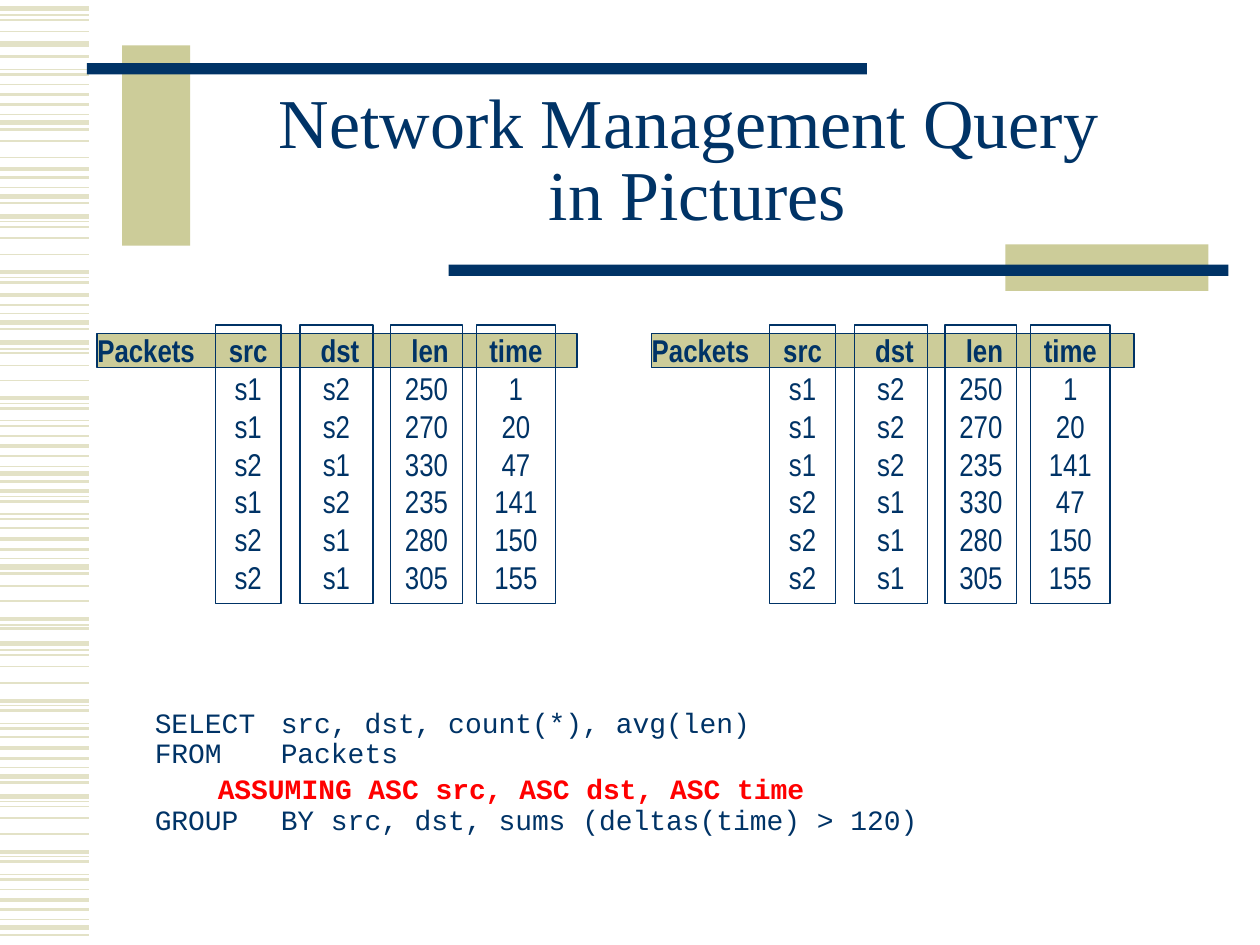
from pptx import Presentation
from pptx import util as u
from pptx.dml import color
from pptx.enum import shapes, text
from pptx.oxml import ns
from lxml import etree

Inches, Pt = u.Inches, u.Pt
COLORS = {"navy": "003366", "khaki": "CCCC99", "stripe": "E3E2C7", "red": "FF0000"}


def add_bar(left, top, width, height, fill=None, line=None):
    bar = slide.shapes.add_shape(shapes.MSO_SHAPE.RECTANGLE, Inches(left), Inches(top),
                                 Inches(width), Inches(height))
    bar.shadow.inherit = False
    if fill:
        bar.fill.solid()
        bar.fill.fore_color.rgb = color.RGBColor.from_string(COLORS[fill])
    else:
        bar.fill.background()
    if line:
        bar.line.color.rgb = color.RGBColor.from_string(COLORS[line])
        bar.line.width = Pt(0.75)
    else:
        bar.line.fill.background()
    return bar


def style_runs(paragraph, font, size, bold=False, ink="navy"):
    for run in paragraph.runs:
        run.font.name = font
        run.font.size = Pt(size)
        run.font.bold = bold
        run.font.color.rgb = color.RGBColor.from_string(COLORS[ink])


prs = Presentation()
prs.slide_width, prs.slide_height = Inches(10), Inches(7.5)
slide = prs.slides.add_slide(prs.slide_layouts[6])

# Striped left margin: line weight -> heights on the page
stripes = {
    3: [0.07, 0.35, 0.97, 1.56, 1.72, 2.56, 2.72, 3.76, 4.5, 5.11, 6.16, 6.32, 7.36],
    2.25: [0.75, 1.34, 2.16, 2.34, 3.16, 3.54, 3.9, 4.28, 4.91, 5.56, 5.94, 6.76, 7.14],
    1.5: [0.45, 0.59, 0.83, 1.03, 1.41, 1.61, 2.24, 2.42, 2.61, 3.24, 3.38, 3.62, 3.82,
          3.98, 4.12, 4.36, 4.55, 4.99, 5.64, 5.78, 6.02, 6.21, 6.84, 6.98, 7.22, 7.42],
    1: [0.16, 0.25, 0.67, 1.12, 1.25, 1.8, 1.89, 2.02, 2.8, 2.9, 3.02, 3.46, 4.19,
        4.65, 4.77, 5.2, 5.29, 5.42, 5.85, 6.4, 6.49, 6.62, 7.06],
    0.75: [0.12, 0.55, 0.91, 1.49, 1.76, 2.2, 2.49, 2.77, 3.2, 3.34, 3.7, 3.94, 4.08,
           4.43, 4.96, 5.16, 5.6, 5.74, 6.09, 6.36, 6.8, 6.94, 7.3],
}
for weight, heights in stripes.items():
    for y in heights:
        stripe = slide.shapes.add_connector(shapes.MSO_CONNECTOR.STRAIGHT, Inches(0),
                                            Inches(y), Inches(0.71), Inches(y))
        stripe.line.color.rgb = color.RGBColor.from_string(COLORS["stripe"])
        stripe.line.width = Pt(weight)
        etree.SubElement(stripe.element.spPr, ns.qn("a:effectLst"))

# Bars framing the title
add_bar(0.97, 0.36, 0.54, 1.59, "khaki")
add_bar(0.69, 0.5, 6.19, 0.09, "navy")
add_bar(7.98, 1.94, 1.61, 0.37, "khaki")
add_bar(3.56, 2.1, 6.19, 0.09, "navy")

# Title
title = slide.shapes.add_textbox(Inches(1.5), Inches(0.67), Inches(8.07), Inches(1.25))
title.text_frame.word_wrap = True
title.text_frame.vertical_anchor = text.MSO_ANCHOR.MIDDLE
heading = title.text_frame.paragraphs[0]
heading.text = "Network Management Query \vin Pictures"
heading.alignment = text.PP_ALIGN.CENTER
heading.line_spacing = 0.85
style_runs(heading, "Times New Roman", 40)

# Packets relation, in arrival order and in sorted order
arrival = [("s1", "s2", 250, 1), ("s1", "s2", 270, 20), ("s2", "s1", 330, 47),
           ("s1", "s2", 235, 141), ("s2", "s1", 280, 150), ("s2", "s1", 305, 155)]
ordered = sorted(arrival, key=lambda packet: (packet[0], packet[1], packet[3]))
columns = [("src", 1.04, 0.52), (" dst", 1.71, 0.58), (" len", 2.43, 0.57),
           ("time", 3.11, 0.63)]

for left, band_left, band_width, packets in [(0.67, 0.77, 3.81, arrival),
                                             (5.07, 5.17, 3.83, ordered)]:
    add_bar(band_left, 2.65, band_width, 0.27, "khaki", "navy")
    relation = slide.shapes.add_textbox(Inches(left), Inches(2.58), Inches(0.98), Inches(0.4))
    relation.text_frame.word_wrap = False
    relation.text_frame.text = "Packets"
    relation.text_frame.paragraphs[0].alignment = text.PP_ALIGN.CENTER
    style_runs(relation.text_frame.paragraphs[0], "Arial Narrow", 18, bold=True)

    for (name, offset, width), values in zip(columns, zip(*packets)):
        column = add_bar(left + offset, 2.58, width, 2.21, line="navy")
        frame = column.text_frame
        frame.word_wrap = False
        frame.vertical_anchor = text.MSO_ANCHOR.TOP
        frame.text = "\n".join([name, *map(str, values)])
        for row, cell in enumerate(frame.paragraphs):
            cell.alignment = text.PP_ALIGN.CENTER
            style_runs(cell, "Arial Narrow", 18, bold=row == 0)

# Query
query = slide.shapes.add_textbox(Inches(0.75), Inches(5.58), Inches(8.75), Inches(1.83))
query.text_frame.word_wrap = True
query.text_frame.text = ("\tSELECT\tsrc, dst, count(*), avg(len)\vFROM\tPackets\n"
                         "\t\tASSUMING ASC src, ASC dst, ASC time\v"
                         "GROUP\tBY src, dst, sums (deltas(time) > 120)")
for clause in query.text_frame.paragraphs:
    clause.line_spacing = 0.9
    clause.space_before = Pt(3.5)
    properties = clause._p.get_or_add_pPr()
    properties.set("marL", str(Inches(0.38)))
    properties.set("indent", str(-Inches(0.38)))
    style_runs(clause, "Courier New", 16)
assuming = query.text_frame.paragraphs[1].runs[0]
assuming.font.bold = True
assuming.font.color.rgb = color.RGBColor.from_string(COLORS["red"])

prs.save("out.pptx")
